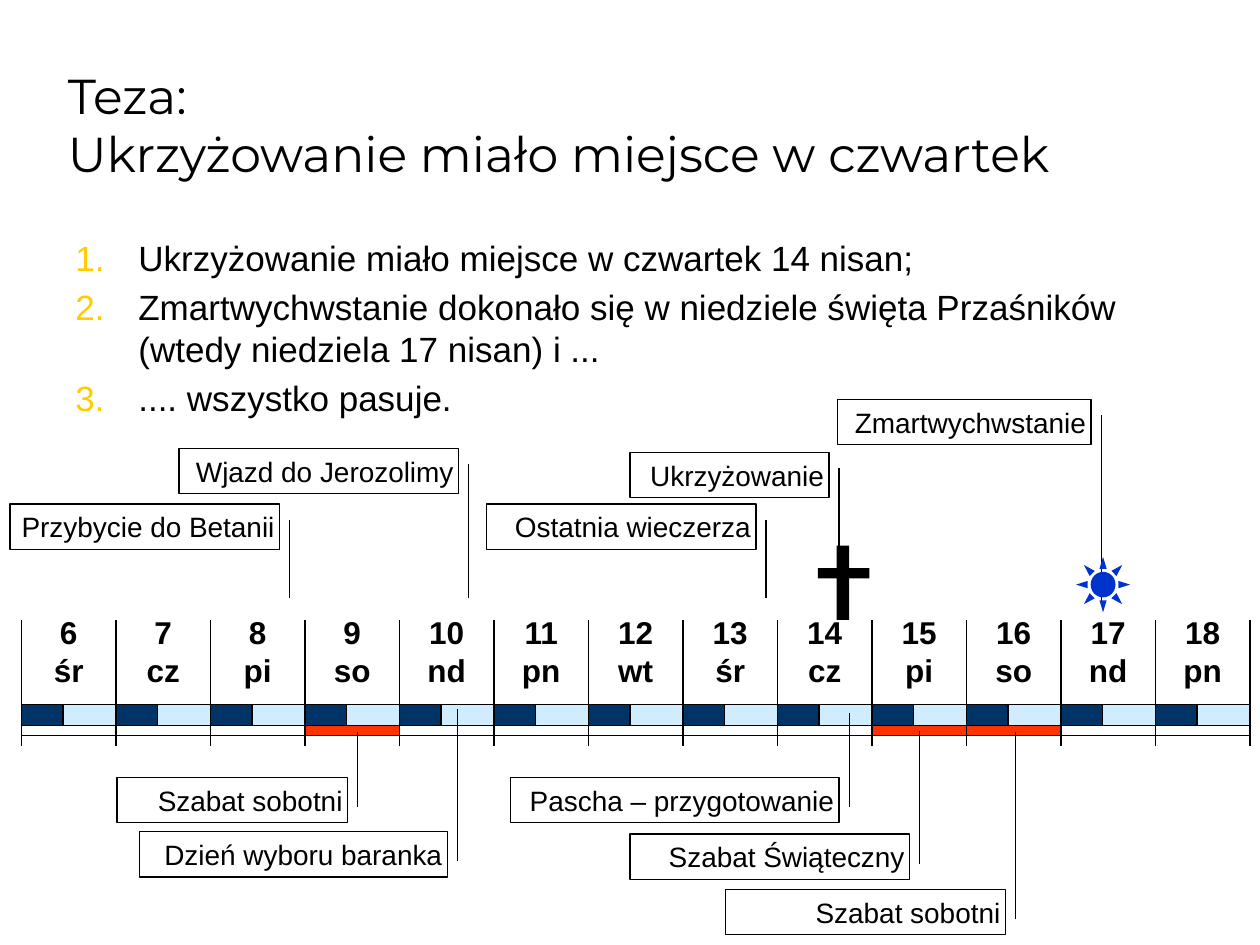
from dataclasses import dataclass

from lxml.etree import SubElement
from pptx import Presentation
from pptx.dml.color import RGBColor
from pptx.enum.shapes import MSO_CONNECTOR, MSO_SHAPE
from pptx.enum.text import MSO_ANCHOR, MSO_AUTO_SIZE, PP_ALIGN
from pptx.oxml.ns import qn
from pptx.util import Inches, Pt


@dataclass(frozen=True)
class Theme:
    ink: str = "000000"
    number: str = "FFCC00"
    night: str = "003366"
    daylight: str = "D1EBFF"
    sabbath: str = "FF3300"
    sun: str = "0033CC"
    heading_font: str = "Montserrat"
    body_font: str = "Arial"
    title_size: int = 28
    body_size: int = 20
    day_size: int = 18
    callout_size: int = 16
    line_width: float = 0.75


THEME = Theme()

# Content
TITLE = "Teza:\vUkrzyżowanie miało miejsce w czwartek"
POINTS = [
    "Ukrzyżowanie miało miejsce w czwartek 14 nisan;",
    "Zmartwychwstanie dokonało się w niedziele święta Przaśników "
    "(wtedy niedziela 17 nisan) i ...",
    ".... wszystko pasuje.",
]
FIRST_DAY = 6
WEEKDAYS = ["śr", "cz", "pi", "so", "nd", "pn", "wt", "śr", "cz", "pi", "so", "nd", "pn"]
SABBATHS = {9, 15, 16}
# Text, left, top, width, height at which the leader line ends
EVENTS_ABOVE = [
    ("Przybycie do Betanii", 0.08, 4.0, 2.14, 4.75),
    ("Wjazd do Jerozolimy", 1.42, 3.56, 2.22, 4.75),
    ("Ostatnia wieczerza", 3.86, 4.0, 2.14, 4.75),
    ("Ukrzyżowanie", 5.0, 3.59, 1.58, 4.77),
    ("Zmartwychwstanie", 6.65, 3.17, 2.01, 4.77),
]
EVENTS_BELOW = [
    ("Szabat sobotni", 0.93, 6.17, 1.83, 5.81),
    ("Dzień wyboru baranka", 1.11, 6.6, 2.44, 5.63),
    ("Pascha – przygotowanie", 4.05, 6.17, 2.61, 5.66),
    ("Szabat sobotni", 5.76, 7.06, 2.22, 5.81),
    ("Szabat Świąteczny", 5.0, 6.62, 2.22, 5.8),
]

# Timeline measures, in inches
TIMELINE_LEFT, DAY_WIDTH, NIGHT_WIDTH = 0.17, 0.75, 0.33
LABEL_TOP, LABEL_HEIGHT = 4.75, 0.83
TICK_TOP, TICK_BOTTOM = 4.92, 5.92
BAR_TOP, BAR_HEIGHT = 5.59, 0.17
SABBATH_TOP, SABBATH_HEIGHT = 5.76, 0.08
CALLOUT_HEIGHT, LEADER_GAP, CALLOUT_INSET = 0.36, 0.08, 0.04


def color(name):
    return RGBColor.from_string(name)


def set_font(paragraph, size, name=THEME.body_font, bold=False):
    font = paragraph.font
    font.name, font.size, font.bold = name, Pt(size), bold
    font.color.rgb = color(THEME.ink)


def add_shape(shapes, kind, left, top, width, height, fill=None, outlined=True):
    shape = shapes.add_shape(kind, Inches(left), Inches(top), Inches(width), Inches(height))
    shape.shadow.inherit = False
    if fill:
        shape.fill.solid()
        shape.fill.fore_color.rgb = color(fill)
    else:
        shape.fill.background()
    if outlined:
        shape.line.color.rgb = color(THEME.ink)
        shape.line.width = Pt(THEME.line_width)
    else:
        shape.line.fill.background()
    return shape


def flip_horizontally(shape):
    shape._element.spPr.find(qn("a:xfrm")).set("flipH", "1")


def add_text_box(shapes, left, top, width, height, anchor, wrap=True):
    box = shapes.add_textbox(Inches(left), Inches(top), Inches(width), Inches(height))
    frame = box.text_frame
    frame.word_wrap, frame.vertical_anchor = wrap, anchor
    return frame


def add_callout(shapes, text, left, top, width, leader_end, leader_start):
    shape = add_shape(shapes, MSO_SHAPE.LINE_CALLOUT_1, left, top, width, CALLOUT_HEIGHT)
    flip_horizontally(shape)
    leader_x = -LEADER_GAP / width
    leader = [leader_start, leader_x, (leader_end - top) / CALLOUT_HEIGHT, leader_x]
    for index, value in enumerate(leader):
        shape.adjustments[index] = value
    frame = shape.text_frame
    frame.margin_left = frame.margin_right = Inches(CALLOUT_INSET)
    frame.margin_top = frame.margin_bottom = Inches(CALLOUT_INSET)
    frame.vertical_anchor = MSO_ANCHOR.MIDDLE
    frame.auto_size = MSO_AUTO_SIZE.SHAPE_TO_FIT_TEXT
    paragraph = frame.paragraphs[0]
    paragraph.text, paragraph.alignment = text, PP_ALIGN.RIGHT
    set_font(paragraph, THEME.callout_size)


def add_tick(shapes, x):
    tick = shapes.add_connector(MSO_CONNECTOR.STRAIGHT, Inches(x), Inches(TICK_BOTTOM),
                                Inches(x), Inches(TICK_TOP))
    tick.line.color.rgb = color(THEME.ink)
    tick.line.width = Pt(THEME.line_width)
    SubElement(tick._element.spPr, qn("a:effectLst"))


def add_day(shapes, day, weekday, left):
    rectangle = MSO_SHAPE.RECTANGLE
    add_shape(shapes, rectangle, left, BAR_TOP, NIGHT_WIDTH, BAR_HEIGHT, THEME.night)
    add_shape(shapes, rectangle, left + NIGHT_WIDTH, BAR_TOP,
              DAY_WIDTH - NIGHT_WIDTH, BAR_HEIGHT, THEME.daylight)
    add_shape(shapes, rectangle, left, SABBATH_TOP, DAY_WIDTH, SABBATH_HEIGHT,
              THEME.sabbath if day in SABBATHS else None)
    frame = add_text_box(shapes, left, LABEL_TOP, DAY_WIDTH, LABEL_HEIGHT,
                         MSO_ANCHOR.MIDDLE, wrap=False)
    paragraph = frame.paragraphs[0]
    paragraph.text, paragraph.alignment = f"{day}\v{weekday}", PP_ALIGN.CENTER
    set_font(paragraph, THEME.day_size, bold=True)


def add_points(shapes):
    frame = add_text_box(shapes, 0.5, 1.83, 8.94, 1.5, MSO_ANCHOR.TOP)
    for index, point in enumerate(POINTS):
        paragraph = frame.add_paragraph() if index else frame.paragraphs[0]
        paragraph.text = point
        if index:
            paragraph.space_before = Pt(4)
        properties = paragraph._p.get_or_add_pPr()
        properties.set("marL", str(Inches(0.5)))
        properties.set("indent", str(-Inches(0.5)))
        bullet_color = SubElement(properties, qn("a:buClr"))
        SubElement(bullet_color, qn("a:srgbClr"), val=THEME.number)
        SubElement(properties, qn("a:buAutoNum"), type="arabicPeriod")
        set_font(paragraph, THEME.body_size)


def main():
    presentation = Presentation()
    presentation.slide_width, presentation.slide_height = Inches(10), Inches(7.5)
    slide = presentation.slides.add_slide(presentation.slide_layouts[6])
    shapes = slide.shapes

    # Title
    title = add_text_box(shapes, 0.44, 0.25, 9.06, 1.25, MSO_ANCHOR.BOTTOM).paragraphs[0]
    title.text = TITLE
    set_font(title, THEME.title_size, THEME.heading_font)

    # Events above the timeline
    for event in EVENTS_ABOVE:
        add_callout(shapes, *event, leader_start=0.35)

    # Timeline of days
    timeline = shapes.add_group_shape().shapes
    for index, weekday in enumerate(WEEKDAYS):
        add_day(timeline, FIRST_DAY + index, weekday, TIMELINE_LEFT + index * DAY_WIDTH)
    for index in range(len(WEEKDAYS) + 1):
        add_tick(timeline, TIMELINE_LEFT + index * DAY_WIDTH)

    # Sun and cross
    sun = add_shape(shapes, MSO_SHAPE.SUN, 8.54, 4.42, 0.43, 0.44, THEME.sun, outlined=False)
    sun.adjustments[0] = 0.27
    flip_horizontally(sun)
    cross = shapes.add_group_shape().shapes
    for beam in [(6.64, 4.33, 0.1, 0.59), (6.49, 4.51, 0.41, 0.08)]:
        add_shape(cross, MSO_SHAPE.RECTANGLE, *beam, THEME.ink, outlined=False)

    # Events below the timeline
    for event in EVENTS_BELOW:
        add_callout(shapes, *event, leader_start=0.65)

    # Numbered points
    add_points(shapes)
    presentation.save("out.pptx")


if __name__ == "__main__":
    main()
